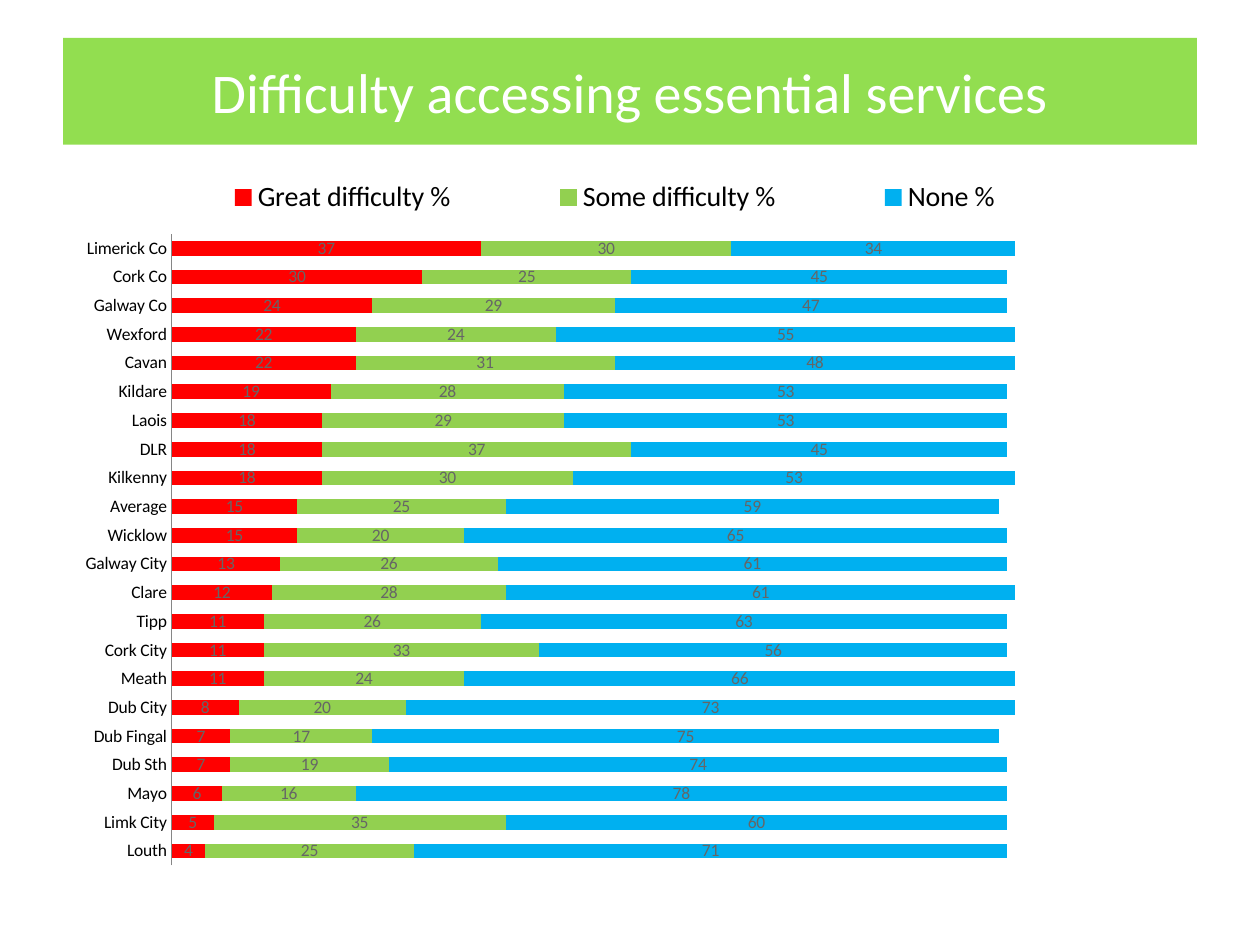
from dataclasses import dataclass

from lxml import etree
from pptx import Presentation
from pptx import util as u
from pptx.chart.data import CategoryChartData
from pptx.dml.color import RGBColor
from pptx.enum import chart as ch, text
from pptx.oxml.ns import qn

WIDTH, HEIGHT = u.Inches(10), u.Inches(7.5)


@dataclass(frozen=True)
class Theme:
    font: str = "Calibri"
    banner: str = "92DE50"
    white: str = "FFFFFF"
    black: str = "000000"
    label: str = "666666"
    axis: str = "868686"
    series: tuple = ("FF0000", "92D050", "00B0F0")
    title_size: int = 32
    legend_size: int = 16
    chart_size: int = 10


THEME = Theme()
LEVELS = ("Great difficulty %", "Some difficulty %", "None %")
# Area and its share at each level, from the bottom bar to the top
AREAS = (
    ("Louth", 4, 25, 71),
    ("Limk City", 5, 35, 60),
    ("Mayo", 6, 16, 78),
    ("Dub Sth", 7, 19, 74),
    ("Dub Fingal", 7, 17, 75),
    ("Dub City", 8, 20, 73),
    ("Meath", 11, 24, 66),
    ("Cork City", 11, 33, 56),
    ("Tipp", 11, 26, 63),
    ("Clare", 12, 28, 61),
    ("Galway City", 13, 26, 61),
    ("Wicklow", 15, 20, 65),
    ("Average", 15, 25, 59),
    ("Kilkenny", 18, 30, 53),
    ("DLR", 18, 37, 45),
    ("Laois", 18, 29, 53),
    ("Kildare", 19, 28, 53),
    ("Cavan", 22, 31, 48),
    ("Wexford", 22, 24, 55),
    ("Galway Co", 24, 29, 47),
    ("Cork Co", 30, 25, 45),
    ("Limerick Co", 37, 30, 34),
)


def share_box(left, top, width, height):
    """Turn shares of the slide into lengths."""
    return (int(left * WIDTH), int(top * HEIGHT),
            int(width * WIDTH), int(height * HEIGHT))


def style_font(font, size, color):
    font.name = THEME.font
    font.size = u.Pt(size)
    font.color.rgb = RGBColor.from_string(color)


def write_text(frame, words, size, color, align=text.PP_ALIGN.CENTER):
    frame.word_wrap = True
    frame.vertical_anchor = text.MSO_ANCHOR.MIDDLE
    paragraph = frame.paragraphs[0]
    paragraph.alignment = align
    run = paragraph.add_run()
    run.text = words
    style_font(run.font, size, color)


def set_layout(part, shares, inner=False):
    """Fix a chart part at left, top, width, height as shares of the chart."""
    layout = part.find(qn("c:layout"))
    if layout is None:
        layout = etree.Element(qn("c:layout"))
        position = part.find(qn("c:legendPos"))
        part.insert(0 if position is None else part.index(position) + 1, layout)
    for old in list(layout):
        layout.remove(old)
    manual = etree.SubElement(layout, qn("c:manualLayout"))
    settings = [("layoutTarget", "inner")] if inner else []
    settings += [("xMode", "edge"), ("yMode", "edge")]
    settings += zip("xywh", shares)
    for tag, value in settings:
        etree.SubElement(manual, qn("c:" + tag)).set("val", str(value))


def add_banner(slide, box):
    title = slide.shapes.title
    title.left, title.top, title.width, title.height = box
    title.fill.solid()
    title.fill.fore_color.rgb = RGBColor.from_string(THEME.banner)
    write_text(title.text_frame, "Difficulty accessing essential services",
               size=THEME.title_size, color=THEME.white)


def format_series(series, color):
    series.format.fill.solid()
    series.format.fill.fore_color.rgb = RGBColor.from_string(color)
    labels = series.data_labels
    labels.show_value = True
    labels.number_format = "#,##0"
    labels.number_format_is_linked = False
    style_font(labels.font, THEME.chart_size, THEME.label)


def add_difficulty_chart(slide, box):
    data = CategoryChartData()
    names, *columns = zip(*AREAS)
    data.categories = names
    for level, values in zip(LEVELS, columns):
        data.add_series(level, values)
    chart = slide.shapes.add_chart(ch.XL_CHART_TYPE.BAR_STACKED, *box, data).chart
    chart.has_title = False
    style_font(chart.font, THEME.chart_size, THEME.black)

    plot = chart.plots[0]
    plot.gap_width, plot.overlap = 95, 100
    plot.vary_by_categories = False
    for series, color in zip(plot.series, THEME.series):
        format_series(series, color)

    areas, percent = chart.category_axis, chart.value_axis
    areas.major_tick_mark = ch.XL_TICK_MARK.NONE
    areas.format.line.color.rgb = RGBColor.from_string(THEME.axis)
    percent.visible = False
    percent.has_major_gridlines = False
    percent.minimum_scale, percent.maximum_scale = 0, 120

    chart.has_legend = True
    legend = chart.legend
    legend.position = ch.XL_LEGEND_POSITION.TOP
    legend.include_in_layout = False
    style_font(legend.font, THEME.legend_size, THEME.black)

    plot_area = chart.element.find(".//" + qn("c:plotArea"))
    legend_area = chart.element.find(".//" + qn("c:legend"))
    set_layout(plot_area, (0.096, 0.096, 0.884, 0.884), inner=True)
    set_layout(legend_area, (0.063, 0.01, 0.847, 0.07))


def main():
    deck = Presentation()
    deck.slide_width, deck.slide_height = WIDTH, HEIGHT
    slide = deck.slides.add_slide(deck.slide_layouts.get_by_name("Title Only"))
    add_banner(slide, share_box(0.05, 0.04, 0.9, 0.113))
    add_difficulty_chart(slide, share_box(0.05, 0.175, 0.9, 0.756))
    deck.save("out.pptx")


if __name__ == "__main__":
    main()
